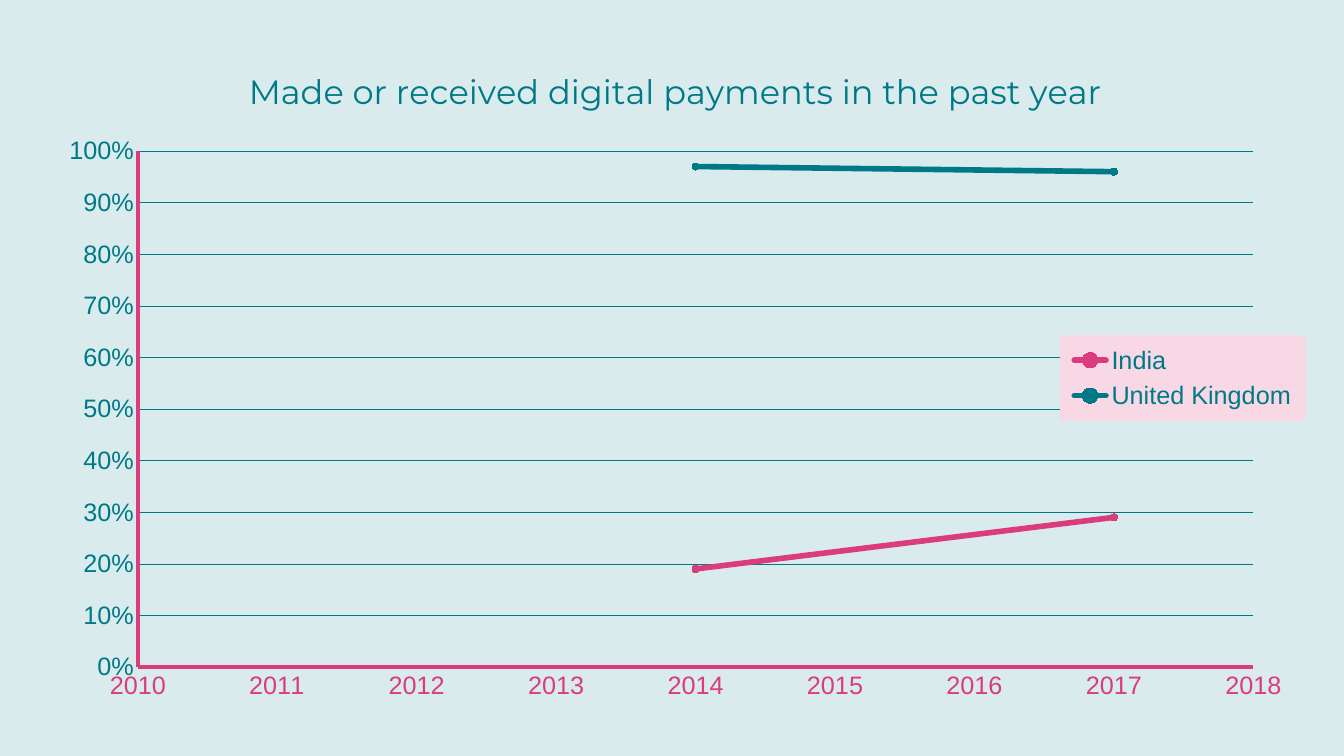
from lxml import etree
from pptx import Presentation
from pptx.chart.data import XyChartData
from pptx.dml.color import RGBColor
from pptx.enum.chart import XL_CHART_TYPE, XL_LEGEND_POSITION, XL_MARKER_STYLE, XL_TICK_MARK
from pptx.oxml import parse_xml
from pptx.oxml.ns import nsdecls, qn
from pptx.util import Inches, Pt

COLORS = {"teal": "007987", "pink": "DA3C7E", "background": "D9EBED", "legend": "F8D8E5"}
PAYMENTS = {
    "India": ("pink", {2011: None, 2014: 0.19, 2017: 0.29}),
    "United Kingdom": ("teal", {2011: None, 2014: 0.97, 2017: 0.96}),
}
TITLE = "Made or received digital payments in the past year"


def rgb(name):
    return RGBColor.from_string(COLORS[name])


def style_font(font, color, size=18, name="Arial"):
    font.name = name
    font.size = Pt(size)
    font.bold = False
    font.color.rgb = rgb(color)


def style_line(line, color, width):
    line.color.rgb = rgb(color)
    line.width = Pt(width)


def set_layout(element, predecessor, inner=False, **fractions):
    for old in element.findall(qn("c:layout")):
        element.remove(old)
    layout = etree.Element(qn("c:layout"))
    manual = etree.SubElement(layout, qn("c:manualLayout"))
    if inner:
        etree.SubElement(manual, qn("c:layoutTarget"), val="inner")
    for key in ("x", "y"):
        etree.SubElement(manual, qn(f"c:{key}Mode"), val="edge")
    for key, value in fractions.items():
        etree.SubElement(manual, qn(f"c:{key}"), val=str(value))
    if predecessor is None:
        element.insert(0, layout)
    else:
        element.find(qn(predecessor)).addnext(layout)


def style_axis(axis, color, minimum, maximum, step, number_format):
    axis.minimum_scale = minimum
    axis.maximum_scale = maximum
    axis.major_unit = step
    axis.major_tick_mark = axis.minor_tick_mark = XL_TICK_MARK.NONE
    axis.tick_labels.number_format = number_format
    axis.tick_labels.number_format_is_linked = False
    style_font(axis.tick_labels.font, color)
    style_line(axis.format.line, "pink", 2.5)


def style_series(series, color):
    series.smooth = False
    style_line(series.format.line, color, 4)
    series._element.find(qn("c:spPr")).find(qn("a:ln")).set("cap", "rnd")
    marker = series.marker
    marker.style = XL_MARKER_STYLE.CIRCLE
    marker.size = 5
    marker.format.fill.solid()
    marker.format.fill.fore_color.rgb = rgb(color)
    marker.format.line.color.rgb = rgb(color)


def clear_missing_values(series):
    for point in list(series._element.find(qn("c:yVal")).iter(qn("c:pt"))):
        if point.findtext(qn("c:v")) in (None, "", "None"):
            point.getparent().remove(point)


def add_title(chart):
    text_frame = chart.chart_title.text_frame
    text_frame.text = TITLE
    style_font(text_frame.paragraphs[0].runs[0].font, "teal", 24, "Montserrat")
    set_layout(chart.chart_title._element, "c:tx", x=0.157, y=0.028)


def add_legend(chart):
    chart.has_legend = True
    legend = chart.legend
    legend.position = XL_LEGEND_POSITION.RIGHT
    legend.include_in_layout = False
    style_font(legend.font, "teal")
    set_layout(legend._element, "c:legendPos", x=0.807, y=0.442, w=0.188, h=0.116)
    fill = f'<a:solidFill><a:srgbClr val="{COLORS["legend"]}"/></a:solidFill>'
    properties = parse_xml(
        f'<c:spPr {nsdecls("c", "a")}>{fill}'
        f'<a:ln w="{Pt(6)}">{fill}<a:round/></a:ln></c:spPr>'
    )
    overlay = legend._element.find(qn("c:overlay"))
    overlay.set("val", "1")
    overlay.addnext(properties)


def add_payments_chart(slide):
    data = XyChartData()
    for name, (_, points) in PAYMENTS.items():
        series = data.add_series(name, number_format="0%")
        for year, share in points.items():
            series.add_data_point(year, share)
    chart = slide.shapes.add_chart(
        XL_CHART_TYPE.XY_SCATTER_LINES,
        Inches(0.44), Inches(0.43), Inches(12.53), Inches(6.64), data,
    ).chart
    style_font(chart.font, "teal")
    plot = chart.plots[0]
    plot.vary_by_categories = False
    for series, (color, _) in zip(plot.series, PAYMENTS.values()):
        style_series(series, color)
        clear_missing_values(series)
    style_axis(chart.category_axis, "pink", 2010, 2018, 1, "General")
    chart.category_axis.has_major_gridlines = False
    style_axis(chart.value_axis, "teal", 0, 1, 0.1, "0%")
    chart.value_axis.has_major_gridlines = True
    style_line(chart.value_axis.major_gridlines.format.line, "teal", 0.25)
    plot_area = chart._chartSpace.chart.plotArea
    set_layout(plot_area, None, inner=True, x=0.074, y=0.161, w=0.883, h=0.771)
    add_title(chart)
    add_legend(chart)


def main():
    presentation = Presentation()
    presentation.slide_width = Inches(13.33)
    presentation.slide_height = Inches(7.5)
    slide = presentation.slides.add_slide(presentation.slide_layouts[6])
    slide.background.fill.solid()
    slide.background.fill.fore_color.rgb = rgb("background")
    add_payments_chart(slide)
    presentation.save("out.pptx")


if __name__ == "__main__":
    main()
